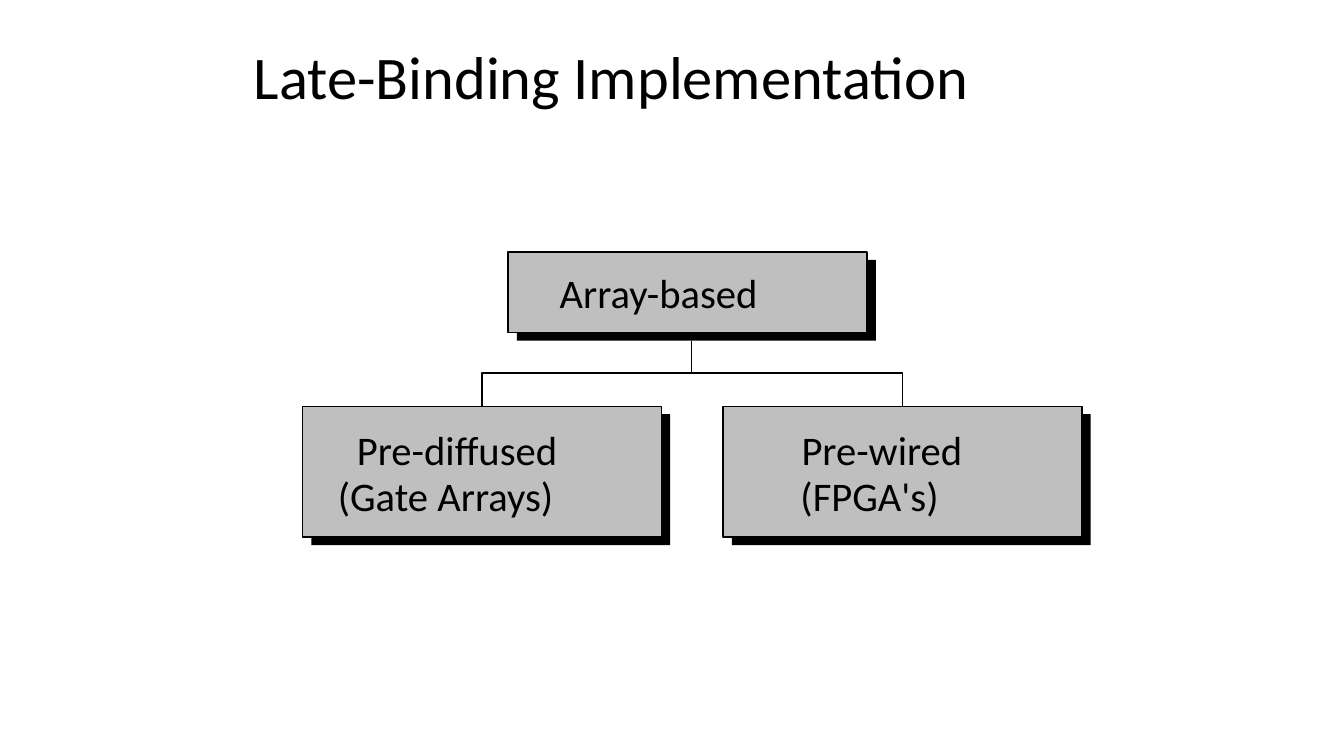
"""Build the late-binding implementation slide: a small tree of shadowed boxes."""
from dataclasses import dataclass

from lxml import etree
from pptx import Presentation
from pptx import util as u
from pptx.dml.color import RGBColor
from pptx.enum import shapes, text
from pptx.oxml import ns

BLACK = RGBColor(0x00, 0x00, 0x00)
WHITE = RGBColor(0xFF, 0xFF, 0xFF)
GREY = RGBColor(0xBF, 0xBF, 0xBF)
FONT = "Calibri"
WIDTH, HEIGHT = u.Inches(13.33), u.Inches(7.5)
COLUMNS = ROWS = 100
BOX_COLUMNS = 26.71
LABEL_ROWS = 6.53
SHADOW_COLUMNS, SHADOW_ROWS = 0.66, 1.05
JUNCTION_COLUMN, JUNCTION_ROW = 51.46, 49.33


@dataclass(frozen=True)
class Label:
    words: str
    column: float
    row: float
    columns: float


@dataclass(frozen=True)
class Node:
    column: float
    row: float
    rows: float
    labels: tuple[Label, ...]

    @property
    def middle(self) -> float:
        return self.column + BOX_COLUMNS / 2


ROOT = Node(37.81, 33.33, 10.67, (Label("Array-based", 41.64, 35.47, 14.93),))
CHILDREN = (
    Node(22.5, 53.73, 17.33, (
        Label("Pre-diffused", 26.56, 56.27, 15.08),
        Label("(Gate Arrays)", 25.13, 62.27, 16.13),
    )),
    Node(53.79, 53.73, 17.33, (
        Label("Pre-wired", 59.64, 56.27, 12.08),
        Label("(FPGA's)", 59.56, 62.27, 10.35),
    )),
)
TITLE = Label("Late-Binding Implementation", 18.15, 5.6, 63.77)


def across(columns: float) -> int:
    return round(WIDTH * columns / COLUMNS)


def down(rows: float) -> int:
    return round(HEIGHT * rows / ROWS)


def style_line(line) -> None:
    line.color.rgb = BLACK
    line.width = u.Pt(1)


def add_box(page, column: float, row: float, rows: float, fill: RGBColor, outlined: bool) -> None:
    box = page.shapes.add_shape(shapes.MSO_SHAPE.RECTANGLE, across(column), down(row),
                                across(BOX_COLUMNS), down(rows))
    box.shadow.inherit = False
    box.fill.solid()
    box.fill.fore_color.rgb = fill
    if outlined:
        style_line(box.line)
    else:
        box.line.fill.background()


def add_text(page, label: Label, rows: float, size: float):
    box = page.shapes.add_textbox(across(label.column), down(label.row),
                                  across(label.columns), down(rows))
    para = box.text_frame.paragraphs[0]
    para.text = label.words
    para.font.name = FONT
    para.font.size = u.Pt(size)
    para.font.color.rgb = BLACK
    return box.text_frame


def add_title(page) -> None:
    frame = add_text(page, TITLE, 10, 43.2)
    frame.word_wrap = True
    frame.vertical_anchor = text.MSO_ANCHOR.MIDDLE
    frame.paragraphs[0].line_spacing = 0.9


def add_label(page, label: Label) -> None:
    frame = add_text(page, label, LABEL_ROWS, 29)
    frame.word_wrap = False
    frame.auto_size = text.MSO_AUTO_SIZE.SHAPE_TO_FIT_TEXT
    frame.margin_left = frame.margin_right = frame.margin_top = frame.margin_bottom = 0


def add_node(page, node: Node) -> None:
    add_box(page, node.column + SHADOW_COLUMNS, node.row + SHADOW_ROWS, node.rows, BLACK, False)
    add_box(page, node.column, node.row, node.rows, GREY, True)
    for label in node.labels:
        add_label(page, label)


def add_stem(page) -> None:
    stem = page.shapes.add_connector(
        shapes.MSO_CONNECTOR.STRAIGHT, across(JUNCTION_COLUMN), down(JUNCTION_ROW),
        across(JUNCTION_COLUMN), down(ROOT.row + ROOT.rows + SHADOW_ROWS))
    style_line(stem.line)
    etree.SubElement(stem._element.spPr, ns.qn("a:effectLst"))


def add_branch(page, child: Node) -> None:
    builder = page.shapes.build_freeform(across(child.middle), down(child.row))
    builder.add_line_segments([(across(child.middle), down(JUNCTION_ROW)),
                               (across(JUNCTION_COLUMN), down(JUNCTION_ROW))], close=False)
    branch = builder.convert_to_shape()
    branch.shadow.inherit = False
    branch.fill.background()
    style_line(branch.line)


def main() -> None:
    deck = Presentation()
    deck.slide_width, deck.slide_height = WIDTH, HEIGHT
    page = deck.slides.add_slide(deck.slide_layouts[6])
    page.background.fill.solid()
    page.background.fill.fore_color.rgb = WHITE
    for node in (*CHILDREN, ROOT):
        add_node(page, node)
    add_stem(page)
    for child in CHILDREN:
        add_branch(page, child)
    add_title(page)
    deck.save("out.pptx")


if __name__ == "__main__":
    main()
